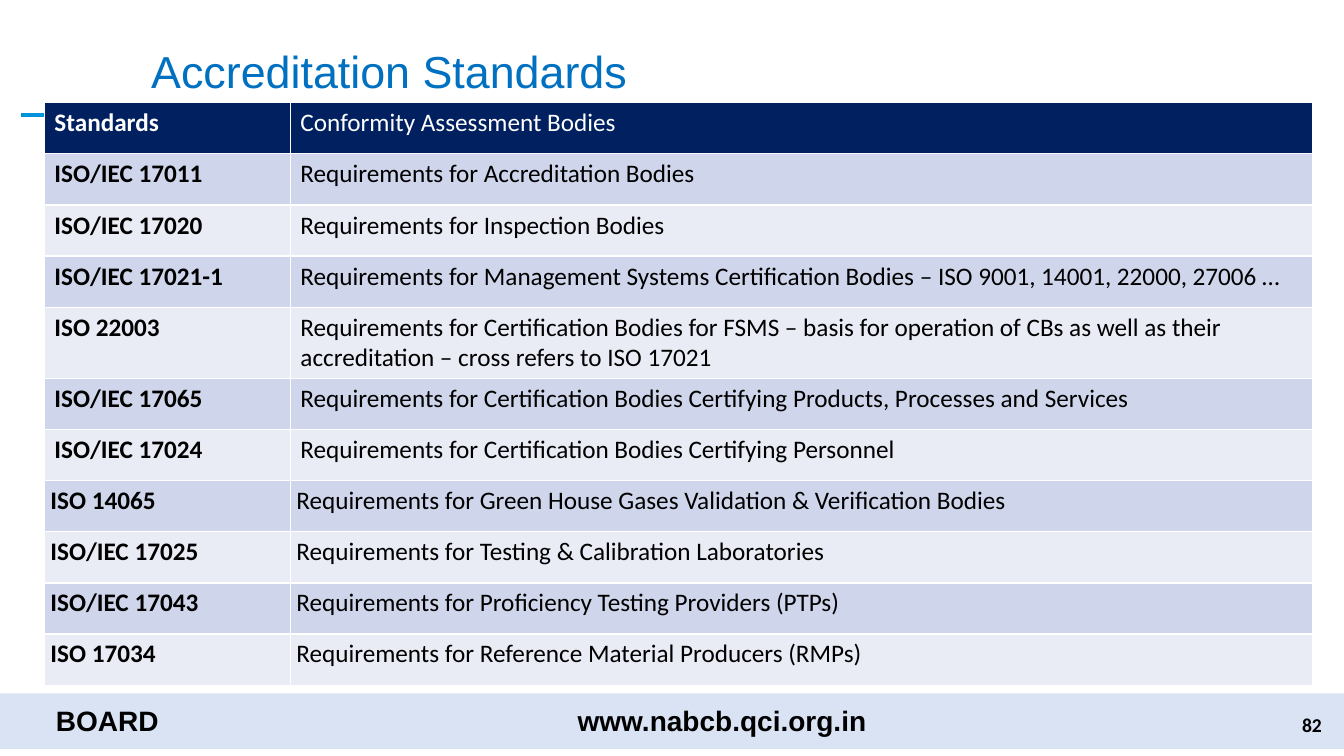
from pptx import Presentation
from pptx.dml.color import RGBColor
from pptx.enum.shapes import MSO_CONNECTOR, MSO_SHAPE
from pptx.enum.text import MSO_ANCHOR, PP_ALIGN
from pptx.oxml import parse_xml
from pptx.oxml.ns import nsdecls
from pptx.util import Inches, Pt
from dataclasses import dataclass

TITLE = "Accreditation Standards"
HEAD = ("Standards", "Conformity Assessment Bodies")
ROWS = [
    ("ISO/IEC 17011", "Requirements for Accreditation Bodies"),
    ("ISO/IEC 17020", "Requirements for Inspection Bodies"),
    ("ISO/IEC 17021-1", "Requirements for Management Systems Certification Bodies – ISO 9001, 14001, 22000, 27006 …"),
    ("ISO 22003", "Requirements for Certification Bodies for FSMS – basis for operation of CBs as well as their accreditation – cross refers to ISO 17021"),
    ("ISO/IEC 17065", "Requirements for Certification Bodies Certifying Products, Processes and Services"),
    ("ISO/IEC 17024", "Requirements for Certification Bodies Certifying Personnel"),
    ("ISO 14065", "Requirements for Green House Gases Validation & Verification Bodies"),
    ("ISO/IEC 17025", "Requirements for Testing & Calibration Laboratories"),
    ("ISO/IEC 17043", "Requirements for Proficiency Testing Providers (PTPs)"),
    ("ISO 17034", "Requirements for Reference Material Producers (RMPs)"),
]
TIGHT = 7
TALL = 4
COLS = (2.44, 10.14)


@dataclass(frozen=True)
class Theme:
    sans: str = "Arial"
    body: str = "Calibri"
    black: str = "000000"
    white: str = "FFFFFF"
    title: str = "0070C0"
    rule: str = "0093DD"
    foot: str = "8FAADC"
    head: str = "002060"
    bands: tuple = ("E9EBF5", "CFD5EA")
    big: int = 32
    mid: int = 20
    cell: int = 18
    small: int = 14


T = Theme()

FOOT = [
    ("www.nabcb.qci.org.in", (5.63, 6.93, 3.21, 0.47), T.sans, T.mid, PP_ALIGN.LEFT, MSO_ANCHOR.TOP),
    ("BOARD", (0.21, 6.91, 1.71, 0.47), T.sans, T.mid, PP_ALIGN.CENTER, MSO_ANCHOR.MIDDLE),
    ("82", (10.21, 6.99, 3, 0.4), T.body, T.small, PP_ALIGN.RIGHT, MSO_ANCHOR.MIDDLE),
]


def rgb(code):
    return RGBColor.from_string(code)


def write(para, text, face, size, color, bold=False):
    run = para.add_run()
    run.text = text
    font = run.font
    font.name, font.size, font.bold = face, Pt(size), bold
    font.color.rgb = rgb(color)


def add_foot(slide):
    band = slide.shapes.add_shape(MSO_SHAPE.RECTANGLE, 0, Inches(6.88), Inches(13.33), Inches(0.55))
    band.shadow.inherit = False
    band.line.fill.background()
    band.fill.solid()
    band.fill.fore_color.rgb = rgb(T.foot)
    tint = band.fill._xPr.find(".//{*}srgbClr")
    tint.append(parse_xml(f'<a:alpha {nsdecls("a")} val="33000"/>'))
    rule = slide.shapes.add_connector(MSO_CONNECTOR.STRAIGHT, Inches(0.21), Inches(1.14), Inches(2.59), Inches(1.14))
    rule.line.color.rgb = rgb(T.rule)
    rule.line.width = Pt(3)
    rule._element.spPr.append(parse_xml(f'<a:effectLst {nsdecls("a")}/>'))
    for text, box, face, size, align, anchor in FOOT:
        frame = slide.shapes.add_textbox(*map(Inches, box)).text_frame
        frame.word_wrap = True
        frame.vertical_anchor = anchor
        frame.paragraphs[0].alignment = align
        write(frame.paragraphs[0], text, face, size, T.black, True)


def add_title(slide):
    title = slide.shapes.title
    title.left, title.top, title.width, title.height = map(Inches, (1.4, 0.31, 11.26, 0.84))
    title.text_frame.vertical_anchor = MSO_ANCHOR.MIDDLE
    para = title.text_frame.paragraphs[0]
    para.alignment = PP_ALIGN.LEFT
    para.line_spacing = 0.9
    write(para, TITLE, T.sans, T.big, T.title)


def edge(cell):
    props = cell._tc.get_or_add_tcPr()
    for spot, side in enumerate("LRTB"):
        props.insert(spot, parse_xml(
            f'<a:ln{side} {nsdecls("a")} w="12700"><a:solidFill>'
            f'<a:srgbClr val="{T.white}"/></a:solidFill></a:ln{side}>'))


def add_grid(slide):
    data = [HEAD, *ROWS]
    frame = slide.shapes.add_table(len(data), len(COLS), Inches(0.44), Inches(1.02), Inches(12.58), Inches(5.78))
    grid = frame.table
    for col, width in zip(grid.columns, COLS):
        col.width = Inches(width)
    for r, texts in enumerate(data):
        grid.rows[r].height = Inches(0.71 if r == TALL else 0.507)
        for c, text in enumerate(texts):
            cell = grid.cell(r, c)
            para = cell.text_frame.paragraphs[0]
            if r >= TIGHT:
                cell.margin_left = cell.margin_right = Inches(0.06)
                cell.margin_top = cell.margin_bottom = 0
                para.line_spacing = 1.15
            write(para, text, T.body, T.cell, T.black if r else T.white, c == 0)
            cell.fill.solid()
            cell.fill.fore_color.rgb = rgb(T.bands[r % 2] if r else T.head)
            edge(cell)


def main():
    deck = Presentation()
    deck.slide_width, deck.slide_height = Inches(13.33), Inches(7.5)
    slide = deck.slides.add_slide(deck.slide_layouts[5])
    add_foot(slide)
    add_title(slide)
    add_grid(slide)
    deck.save("out.pptx")


if __name__ == "__main__":
    main()
